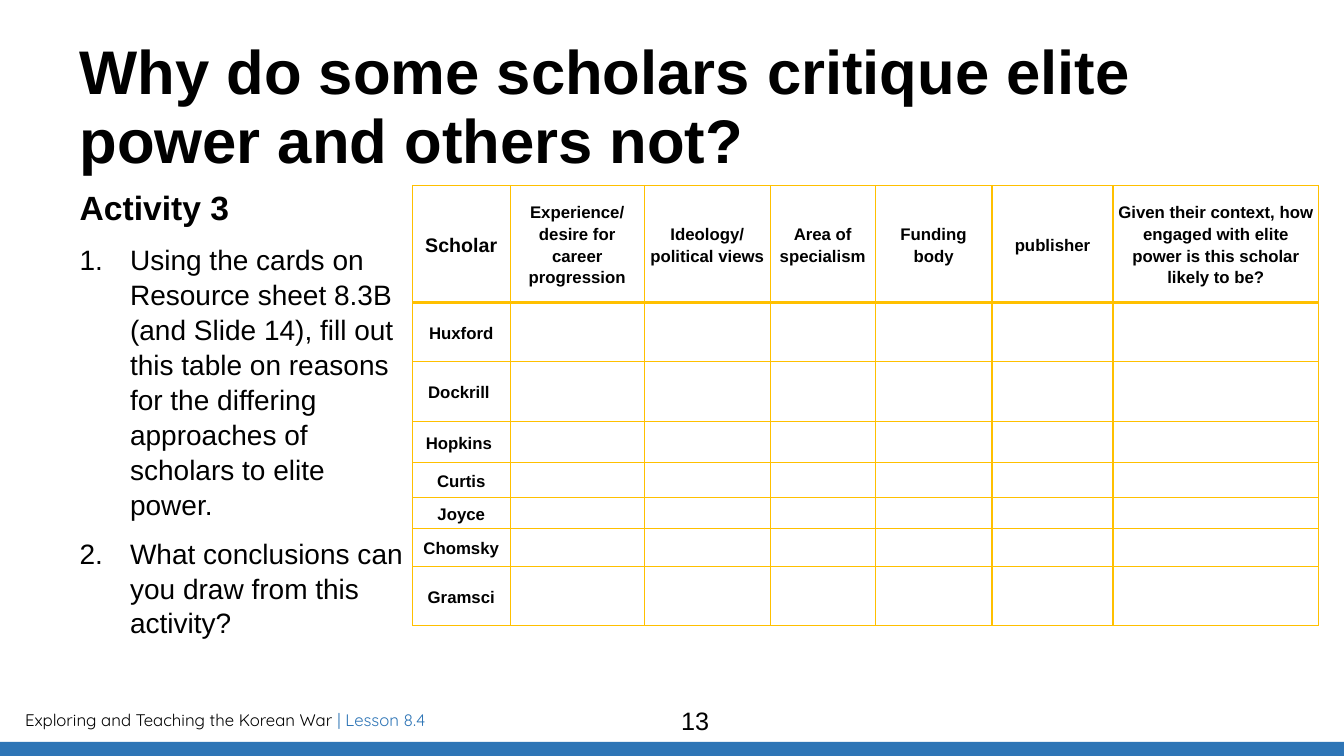
from lxml import etree
from pptx import Presentation
from pptx.dml.color import RGBColor
from pptx.enum.shapes import MSO_SHAPE
from pptx.enum.text import MSO_ANCHOR, PP_ALIGN
from pptx.oxml.ns import qn
from pptx.util import Inches, Pt

RECTANGLE = MSO_SHAPE.RECTANGLE
TOP, MIDDLE = MSO_ANCHOR.TOP, MSO_ANCHOR.MIDDLE
LEFT, CENTER = PP_ALIGN.LEFT, PP_ALIGN.CENTER
COLORS = {"text": "000000", "accent": "2E75B6", "grid": "FFC000"}
FONT, FOOTER_FONT = "Arial", "Quicksand"
TITLE = "Why do some scholars critique elite power and others not?"
ACTIVITY = "Activity 3"
TASKS = [
    "Using the cards on Resource sheet 8.3B (and Slide 14), fill out this table on "
    "reasons for the differing approaches of scholars to elite power.",
    "What conclusions can you draw from this activity?",
]
HEADERS = [
    ["Scholar"],
    ["Experience/", "desire for career progression"],
    ["Ideology/", "political views"],
    ["Area of specialism"],
    ["Funding body"],
    ["publisher"],
    ["Given their context, how engaged with elite power is this scholar likely to be?"],
]
SCHOLARS = ["Huxford", "Dockrill ", "Hopkins ", "Curtis", "Joyce", "Chomsky", "Gramsci"]
COLUMN_WIDTHS = [0.97, 1.33, 1.25, 1.04, 1.16, 1.2, 2.04]
ROW_HEIGHTS = [1.16, 0.59, 0.59, 0.41, 0.35, 0.3, 0.38, 0.59]


def add_run(paragraph, text, size, bold=False, color="text", font=FONT):
    """Add one formatted run to a paragraph."""
    run = paragraph.add_run()
    run.text = text
    run.font.size = Pt(size)
    run.font.bold = bold
    run.font.name = font
    run.font.color.rgb = RGBColor.from_string(COLORS[color])


def set_frame(frame, side=0, edge=0, anchor=TOP):
    """Set the wrapping, margins and anchor of a text frame."""
    frame.word_wrap = True
    frame.margin_left = frame.margin_right = Inches(side)
    frame.margin_top = frame.margin_bottom = Inches(edge)
    frame.vertical_anchor = anchor


def add_text_box(slide, box, side=0, edge=0):
    """Add a text box and return its frame."""
    frame = slide.shapes.add_textbox(*map(Inches, box)).text_frame
    set_frame(frame, side, edge)
    return frame


def add_title(slide, box):
    """Place and fill the title placeholder."""
    title = slide.shapes.title
    title.left, title.top, title.width, title.height = map(Inches, box)
    set_frame(title.text_frame)
    paragraph = title.text_frame.paragraphs[0]
    paragraph.alignment = LEFT
    paragraph.line_spacing = 0.93
    add_run(paragraph, TITLE, 44, bold=True)


def add_activity(slide, box):
    """Add the activity heading and its numbered tasks."""
    frame = add_text_box(slide, box)
    heading = frame.paragraphs[0]
    heading.line_spacing = 1.04
    add_run(heading, ACTIVITY, 24, bold=True)
    for task in TASKS:
        paragraph = frame.add_paragraph()
        paragraph.space_before = Pt(10)
        paragraph.line_spacing = 1.04
        properties = paragraph._p.get_or_add_pPr()
        properties.set("marL", str(Inches(0.5)))
        properties.set("indent", str(-Inches(0.5)))
        etree.SubElement(properties, qn("a:buAutoNum"), type="arabicPeriod")
        add_run(paragraph, task, 20)


def set_borders(cell, bottom):
    """Draw the four borders of a cell."""
    properties = cell._tc.get_or_add_tcPr()
    widths = {"a:lnL": 1, "a:lnR": 1, "a:lnT": 1, "a:lnB": bottom}
    for position, (tag, width) in enumerate(widths.items()):
        line = etree.Element(qn(tag), w=str(Pt(width)))
        fill = etree.SubElement(line, qn("a:solidFill"))
        etree.SubElement(fill, qn("a:srgbClr"), val=COLORS["grid"])
        properties.insert(position, line)


def fill_cell(cell, lines, size, bottom):
    """Write the centred lines of a cell and format it."""
    cell.fill.background()
    cell.vertical_anchor = MIDDLE
    cell.margin_left = cell.margin_right = Inches(0.05)
    cell.margin_top = cell.margin_bottom = 0
    set_borders(cell, bottom)
    frame = cell.text_frame
    for index, line in enumerate(lines):
        paragraph = frame.add_paragraph() if index else frame.paragraphs[0]
        paragraph.alignment = CENTER
        paragraph.line_spacing = 1.15
        if line:
            add_run(paragraph, line, size, bold=True)
        else:
            paragraph.font.size = Pt(size)


def add_scholar_table(slide, box):
    """Add the grid of scholars and reasons."""
    rows = [HEADERS] + [[[name]] + [[""]] * (len(HEADERS) - 1) for name in SCHOLARS]
    table = slide.shapes.add_table(len(rows), len(HEADERS), *map(Inches, box)).table
    table.first_row = table.horz_banding = False
    for column, width in zip(table.columns, COLUMN_WIDTHS):
        column.width = Inches(width)
    for row, height in zip(table.rows, ROW_HEIGHTS):
        row.height = Inches(height)
    for r, row in enumerate(rows):
        for c, lines in enumerate(row):
            size = 14 if r == c == 0 else 12
            fill_cell(table.cell(r, c), lines, size, 2 if r == 0 else 1)


def add_footer(slide, box):
    """Add the course line, the page number and the bottom band."""
    left, top, width, height = box
    course = add_text_box(slide, (left + 0.15, top, 7.82, 0.3), 0.1, 0.05).paragraphs[0]
    add_run(course, "Exploring and Teaching the Korean War ", 12, font=FOOTER_FONT)
    add_run(course, "| Lesson 8.4", 12, color="accent", font=FOOTER_FONT)
    number = add_text_box(slide, (left + 4.36, top - 0.04, 5.07, 0.4), 0.1, 0.05).paragraphs[0]
    number.alignment = CENTER
    add_run(number, "13", 18)
    band_box = (left, top + height - 0.14, width, 0.14)
    band = slide.shapes.add_shape(RECTANGLE, *map(Inches, band_box))
    band.shadow.inherit = False
    band.fill.solid()
    band.fill.fore_color.rgb = RGBColor.from_string(COLORS["accent"])
    band.line.fill.background()


def main():
    """Build and save the slide."""
    presentation = Presentation()
    presentation.slide_width = Inches(13.33)
    presentation.slide_height = Inches(7.5)
    slide = presentation.slides.add_slide(presentation.slide_layouts[5])
    add_footer(slide, (0, 6.99, 13.33, 0.51))
    add_title(slide, (0.79, 0.39, 11.5, 1.45))
    add_activity(slide, (0.79, 1.84, 3.3, 4.76))
    add_scholar_table(slide, (4.09, 1.84, 8.99, 4.37))
    presentation.save("out.pptx")


if __name__ == "__main__":
    main()
